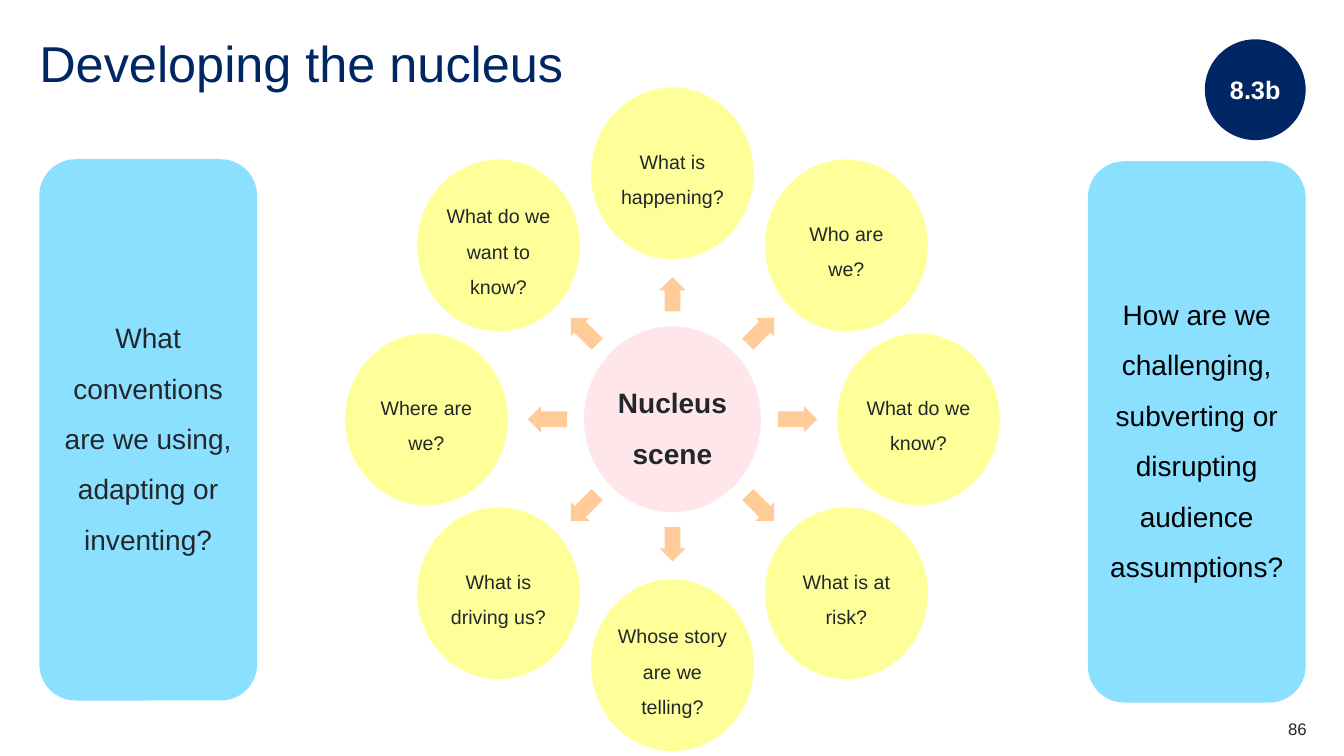
import math

from pptx import Presentation
from pptx.dml.color import RGBColor
from pptx.enum.shapes import MSO_SHAPE
from pptx.enum.text import MSO_ANCHOR, MSO_AUTO_SIZE, PP_ALIGN
from pptx.util import Inches, Pt

# Content
TITLE = "Developing the nucleus"
BADGE = "8.3b"
PAGE_NUMBER = "86"
NUCLEUS = "Nucleus scene"
QUESTIONS = [  # clockwise from the top
    "What is happening?",
    "Who are we?",
    "What do we know?",
    "What is at risk?",
    "Whose story are we telling?",
    "What is driving us?",
    "Where are we?",
    "What do we want to know?",
]

# Style
FONT = "Arial"
NAVY = RGBColor(0x00, 0x26, 0x64)
SKY = RGBColor(0x8B, 0xE0, 0xFF)
PINK = RGBColor(0xFF, 0xE6, 0xEA)
YELLOW = RGBColor(0xFF, 0xFF, 0x99)
PEACH = RGBColor(0xFF, 0xCC, 0x99)
INK = RGBColor(0x22, 0x27, 0x2B)
BLACK = RGBColor(0x00, 0x00, 0x00)
WHITE = RGBColor(0xFF, 0xFF, 0xFF)
OVAL = MSO_SHAPE.OVAL
PANEL = MSO_SHAPE.ROUNDED_RECTANGLE
ARROW = MSO_SHAPE.RIGHT_ARROW
LEFT, CENTER, RIGHT = PP_ALIGN.LEFT, PP_ALIGN.CENTER, PP_ALIGN.RIGHT
TOP, MIDDLE = MSO_ANCHOR.TOP, MSO_ANCHOR.MIDDLE

# Side panels: left, top, text, text colour
PANELS = [
    (0.39, 1.58, "What conventions are we using, adapting or inventing?", INK),
    (10.79, 1.6, "How are we challenging, subverting or disrupting "
                 "audience assumptions?", BLACK),
]
PANEL_SIZE = (2.16, 5.37)

# Wheel geometry in inches
HUB_X, HUB_Y = 6.67, 4.16
HUB_SIZE = (1.77, 1.86)
QUESTION_SIZE = (1.63, 1.72)
QUESTION_RADIUS = 2.44
ARROW_RADIUS = 1.24
ARROW_LENGTHS = [0.34, 0.37, 0.39, 0.37]  # repeats after half a turn
ARROW_WIDTH = 0.26


def write(shape, text, size, color, align=CENTER, bold=False, spacing=None,
          after=None, anchor=MIDDLE, insets=(0.1, 0.05)):
    frame = shape.text_frame
    frame.word_wrap = True
    frame.auto_size = MSO_AUTO_SIZE.NONE
    frame.vertical_anchor = anchor
    frame.margin_left = frame.margin_right = Inches(insets[0])
    frame.margin_top = frame.margin_bottom = Inches(insets[1])
    para = frame.paragraphs[0]
    para.alignment = align
    if spacing:
        para.line_spacing = spacing
    if after:
        para.space_after = Pt(after)
    span = para.add_run()
    span.text = text
    span.font.name = FONT
    span.font.size = Pt(size)
    span.font.bold = bold
    span.font.color.rgb = color


def add_shape(page, kind, left, top, width, height, fill, line=None):
    shape = page.shapes.add_shape(
        kind, Inches(left), Inches(top), Inches(width), Inches(height))
    shape.shadow.inherit = False
    shape.fill.solid()
    shape.fill.fore_color.rgb = fill
    if line:
        shape.line.color.rgb = line
        shape.line.width = Pt(1)
    else:
        shape.line.fill.background()
    return shape


def add_centered(page, kind, x, y, size, fill, line=None):
    width, height = size
    return add_shape(page, kind, x - width / 2, y - height / 2,
                     width, height, fill, line)


def around_hub(radius, angle):
    return (HUB_X + radius * math.cos(math.radians(angle)),
            HUB_Y + radius * math.sin(math.radians(angle)))


def add_wheel(page):
    hub = add_centered(page, OVAL, HUB_X, HUB_Y, HUB_SIZE, PINK, WHITE)
    write(hub, NUCLEUS, 20, INK, bold=True, spacing=1.5, insets=(0.03, 0.03))

    step = 360 / len(QUESTIONS)
    for index, question in enumerate(QUESTIONS):
        angle = index * step - 90
        x, y = around_hub(QUESTION_RADIUS, angle)
        circle = add_centered(page, OVAL, x, y, QUESTION_SIZE, YELLOW, WHITE)
        write(circle, question, 14, INK, spacing=1.5, insets=(0.02, 0.02))

        x, y = around_hub(ARROW_RADIUS, angle)
        length = ARROW_LENGTHS[index % len(ARROW_LENGTHS)]
        arrow = add_centered(page, ARROW, x, y, (length, ARROW_WIDTH), PEACH)
        arrow.adjustments[0] = 0.6
        arrow.adjustments[1] = 0.5
        arrow.rotation = angle % 360


def main():
    deck = Presentation()
    deck.slide_width, deck.slide_height = Inches(13.33), Inches(7.5)
    page = deck.slides.add_slide(deck.slide_layouts[5])

    # Title and badge
    title = page.shapes.title
    title.left, title.top = Inches(0.39), Inches(0.39)
    title.width, title.height = Inches(12.56), Inches(0.6)
    write(title, TITLE, 36, NAVY, align=LEFT, spacing=0.9, anchor=TOP,
          insets=(0, 0))
    badge = add_shape(page, OVAL, 11.95, 0.39, 1, 1, NAVY)
    write(badge, BADGE, 18, WHITE, bold=True)

    # Side panels
    for left, top, text, color in PANELS:
        panel = add_shape(page, PANEL, left, top, *PANEL_SIZE, SKY)
        write(panel, text, 20, color, spacing=1.5, after=12)

    # Nucleus with its ring of questions
    add_wheel(page)

    # Page number
    box = page.shapes.add_textbox(
        Inches(12.17), Inches(7.13), Inches(0.79), Inches(0.2))
    write(box, PAGE_NUMBER, 12, INK, align=RIGHT, anchor=TOP, insets=(0, 0))

    deck.save("out.pptx")


if __name__ == "__main__":
    main()
